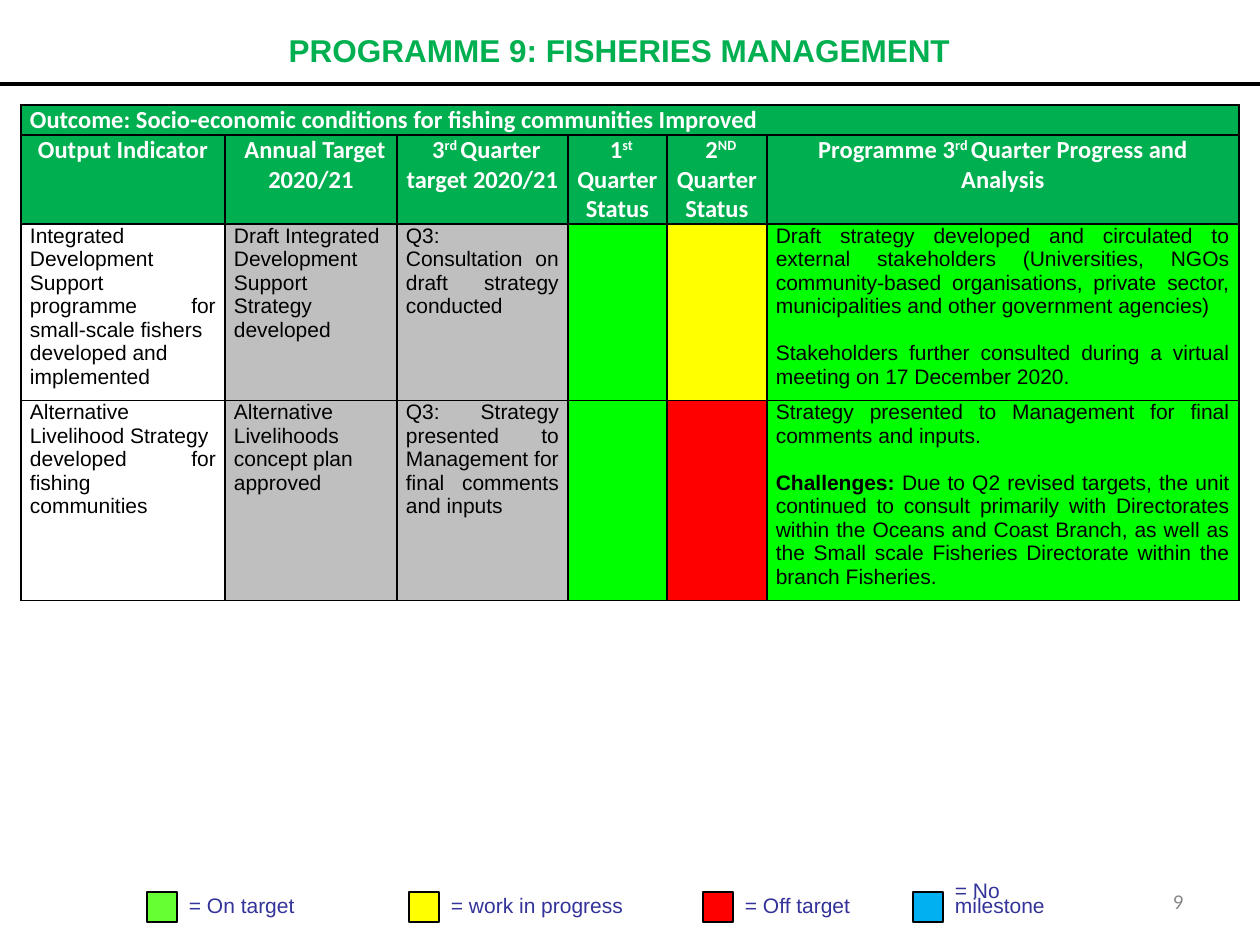
from lxml import etree
from pptx import Presentation
from pptx import util as u
from pptx.dml.color import RGBColor
from pptx.enum import shapes, text
from pptx.oxml.ns import qn

COLORS = {
    "green": "00B050", "bright": "00FF00", "yellow": "FFFF00", "red": "FF0000",
    "blue": "00B0F0", "lime": "66FF33", "gray": "BFBFBF", "white": "FFFFFF",
    "black": "000000", "label": "333399", "number": "898989",
}


def px(value):
    return u.Emu(round(value * 914400 / 126))


def add_run(paragraph, words, size, font, color, bold=False):
    run = paragraph.add_run()
    run.text = words
    run.font.size = u.Pt(size)
    run.font.name = font
    run.font.bold = bold
    run.font.color.rgb = RGBColor.from_string(COLORS[color])
    return run


presentation = Presentation()
presentation.slide_width, presentation.slide_height = px(1260), px(945)
slide = presentation.slides.add_slide(presentation.slide_layouts[5])

title = slide.shapes.title
title.left, title.top, title.width, title.height = px(0), px(31), px(1239), px(38)
title.text_frame.vertical_anchor = text.MSO_ANCHOR.MIDDLE
title.text_frame.margin_top = title.text_frame.margin_bottom = 0
paragraph = title.text_frame.paragraphs[0]
paragraph.alignment = text.PP_ALIGN.CENTER
add_run(paragraph, "PROGRAMME 9: FISHERIES MANAGEMENT", 18, "Arial", "green", True)

rule = slide.shapes.add_connector(shapes.MSO_CONNECTOR.STRAIGHT, px(0), px(84), px(1260), px(84))
rule.line.color.rgb = RGBColor.from_string(COLORS["black"])
rule.line.width = u.Pt(2)
etree.SubElement(rule._element.spPr, qn("a:effectLst"))

legend = [
    (147, "lime", ["= On target"]),
    (409, "yellow", ["= work in progress"]),
    (703, "red", ["= Off target"]),
    (913, "blue", ["= No", "milestone"]),
]
for left, color, lines in legend:
    swatch = slide.shapes.add_shape(shapes.MSO_SHAPE.RECTANGLE, px(left), px(892), px(30), px(30))
    swatch.shadow.inherit = False
    swatch.fill.solid()
    swatch.fill.fore_color.rgb = RGBColor.from_string(COLORS[color])
    swatch.line.color.rgb = RGBColor.from_string(COLORS["black"])
    swatch.line.width = u.Pt(1)
    label = slide.shapes.add_textbox(px(left + 42), px(877), px(200), px(40))
    frame = label.text_frame
    frame.word_wrap = True
    frame.vertical_anchor = text.MSO_ANCHOR.BOTTOM
    frame.margin_left = frame.margin_right = frame.margin_top = frame.margin_bottom = 0
    for index, line in enumerate(lines):
        paragraph = frame.add_paragraph() if index else frame.paragraphs[0]
        paragraph.line_spacing = 0.6
        add_run(paragraph, line, 12, "Arial", "label")

number = slide.shapes.add_textbox(px(903), px(876), px(293), px(50))
number.text_frame.word_wrap = True
number.text_frame.vertical_anchor = text.MSO_ANCHOR.MIDDLE
paragraph = number.text_frame.paragraphs[0]
paragraph.alignment = text.PP_ALIGN.RIGHT
add_run(paragraph, "9", 12, "Calibri", "number")

column_widths = [204, 172, 171, 99, 100, 472]
row_heights = [30, 89, 165, 188]
fills = [
    ["green"] * 6,
    ["green"] * 6,
    ["white", "gray", "gray", "bright", "yellow", "bright"],
    ["white", "gray", "gray", "bright", "red", "bright"],
]
# Each cell is a list of paragraphs, each paragraph a list of (words, style) runs.
rows = [
    [[[("Outcome: Socio-economic conditions for fishing communities Improved", "")]],
     [], [], [], [], []],
    [
        [[("Output Indicator", "")]],
        [[("Annual Target 2020/21", "")]],
        [[("3", ""), ("rd ", "super"), ("Quarter target 2020/21", "")]],
        [[("1", ""), ("st", "super"), (" Quarter Status", "")]],
        [[("2", ""), ("ND", "super"), (" Quarter Status", "")]],
        [[("Programme 3", ""), ("rd ", "super"), ("Quarter Progress and Analysis", "")]],
    ],
    [
        [[("Integrated", "")], [("Development", "")],
         [("Support programme for small-scale fishers", "")],
         [("developed and", "")], [("implemented", "")]],
        [[("Draft Integrated", "")], [("Development Support", "")], [("Strategy developed", "")]],
        [[("Q3: Consultation on draft strategy conducted", "")]],
        [],
        [],
        [[("Draft strategy developed and circulated to external stakeholders (Universities, "
           "NGOs community-based organisations, private sector, municipalities and other "
           "government agencies)", "")],
         [("Stakeholders further consulted during a virtual meeting on 17 December 2020.", "")]],
    ],
    [
        [[("Alternative", "")], [("Livelihood Strategy", "")],
         [("developed for fishing", "")], [("communities", "")]],
        [[("Alternative Livelihoods", "")], [("concept plan", "")], [("approved", "")]],
        [[("Q3: Strategy presented to Management for final comments and inputs", "")]],
        [],
        [],
        [[("Strategy presented to Management for final comments and inputs.", "")],
         [("Challenges: ", "bold"),
          ("Due to Q2 revised targets, the unit continued to consult primarily with "
           "Directorates within the Oceans and Coast Branch, as well as the Small scale "
           "Fisheries Directorate within the branch Fisheries.", "")]],
    ],
]

table = slide.shapes.add_table(4, 6, px(21), px(105), px(sum(column_widths)), px(sum(row_heights))).table
for column, width in zip(table.columns, column_widths):
    column.width = px(width)
for row, height in zip(table.rows, row_heights):
    row.height = px(height)
table.cell(0, 0).merge(table.cell(0, 5))

for row_index, row in enumerate(rows):
    header = row_index < 2
    for column_index, content in enumerate(row):
        cell = table.cell(row_index, column_index)
        cell.margin_left = cell.margin_right = px(9)
        cell.margin_top = cell.margin_bottom = 0
        properties = cell._tc.get_or_add_tcPr()
        for side in ("a:lnL", "a:lnR", "a:lnT", "a:lnB"):
            border = etree.SubElement(properties, qn(side), w=str(u.Pt(1)))
            paint = etree.SubElement(border, qn("a:solidFill"))
            etree.SubElement(paint, qn("a:srgbClr"), val=COLORS["black"])
        cell.fill.solid()
        cell.fill.fore_color.rgb = RGBColor.from_string(COLORS[fills[row_index][column_index]])
        for index, runs in enumerate(content):
            frame = cell.text_frame
            paragraph = frame.add_paragraph() if index else frame.paragraphs[0]
            paragraph.alignment = text.PP_ALIGN.CENTER if row_index == 1 else text.PP_ALIGN.JUSTIFY
            if row_index == 1 and 0 < column_index < 5:
                paragraph._p.get_or_add_pPr().set("indent", str(px(8)))
            if index and column_index == 5:
                paragraph.space_before = u.Pt(13.5)
            for words, style in runs:
                if header:
                    run = add_run(paragraph, words, 14, "Calibri", "white", True)
                else:
                    run = add_run(paragraph, words, 12, "Arial", "black", style == "bold")
                if style == "super":
                    run.font._element.set("baseline", "30000")

presentation.save("out.pptx")
